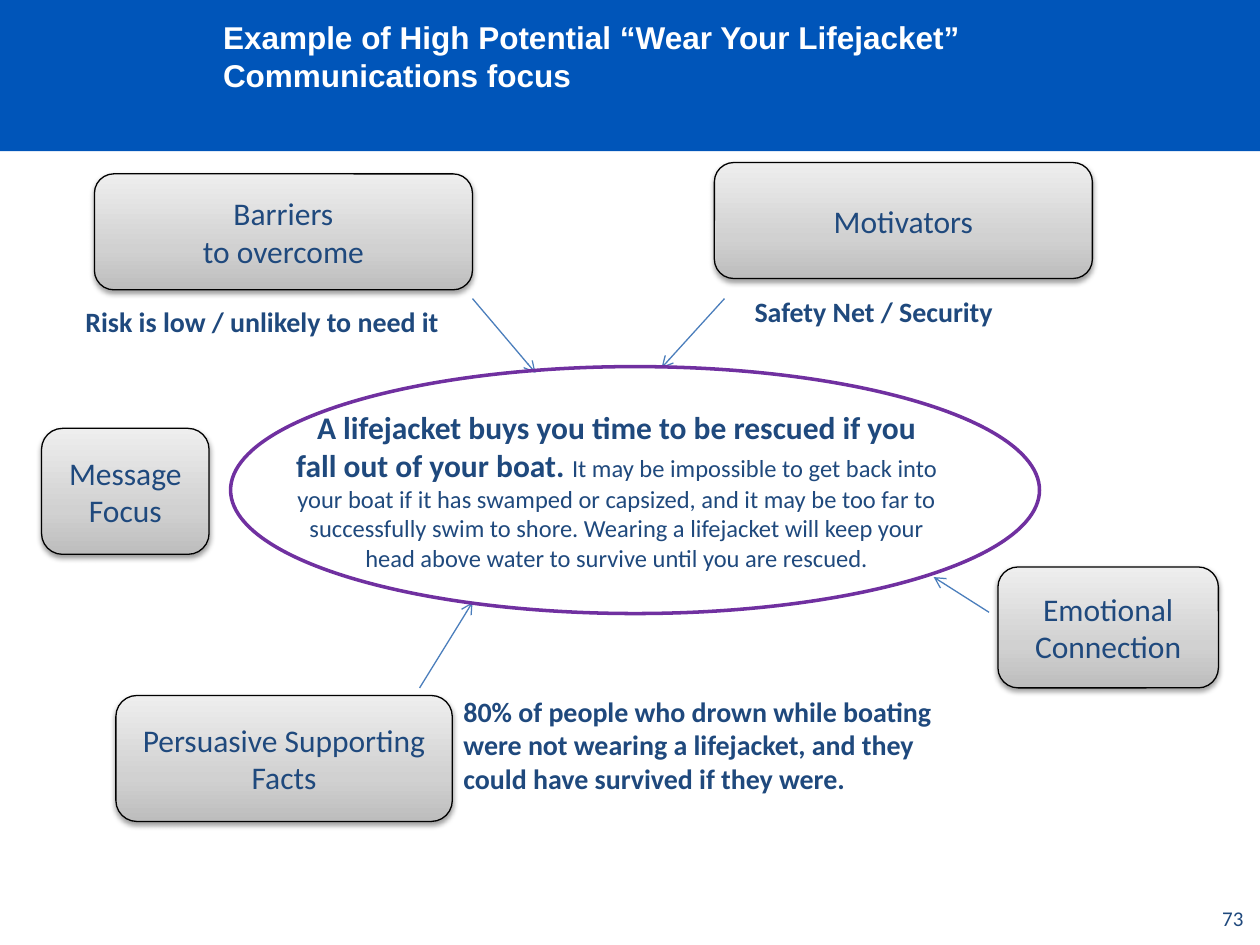
from dataclasses import dataclass

import lxml.etree
import pptx
import pptx.dml.color
import pptx.enum.shapes
import pptx.enum.text
import pptx.oxml.ns
import pptx.util

Inches = pptx.util.Inches
Pt = pptx.util.Pt
qn = pptx.oxml.ns.qn
SHAPE = pptx.enum.shapes.MSO_SHAPE
ALIGN = pptx.enum.text.PP_ALIGN
ANCHOR = pptx.enum.text.MSO_ANCHOR

NAVY = "1F497D"
BLUE = "0055B9"
WHITE = "FFFFFF"
GRAYS = ((0, "BDBDBD"), (35, "D1D1D1"), (100, "EEEEEE"))


@dataclass
class Topic:
    text: str
    box: tuple


@dataclass
class Note:
    text: str
    box: tuple


@dataclass
class Arrow:
    start: tuple
    end: tuple


TOPICS = [
    Topic("Persuasive Supporting Facts", (0.92, 5.52, 2.67, 1)),
    Topic("Emotional Connection", (7.92, 4.5, 1.75, 0.96)),
    Topic("Message Focus", (0.33, 3.4, 1.33, 1)),
    Topic("Barriers\nto overcome", (0.75, 1.38, 3, 0.92)),
    Topic("Motivators", (5.67, 1.29, 3, 0.92)),
]
NOTES = [
    Note("Safety Net / Security", (5.89, 2.29, 2.36, 0.37)),
    Note("Risk is low / unlikely to need it", (0.58, 2.37, 3.17, 0.37)),
    Note("80% of people who drown while boating were not wearing a lifejacket, "
         "and they could have survived if they were.", (3.58, 5.46, 3.95, 0.91)),
]
ARROWS = [
    Arrow((3.33, 5.46), (3.75, 4.78)),
    Arrow((3.75, 2.37), (4.25, 2.96)),
    Arrow((5.75, 2.37), (5.25, 2.92)),
    Arrow((7.85, 4.86), (7.41, 4.58)),
]
KEY_MESSAGE = "A lifejacket buys you time to be rescued if you fall out of your boat. "
KEY_DETAIL = (
    "It may be impossible to get back into your boat if it has swamped or capsized, "
    "and it may be too far to successfully swim to shore. Wearing a lifejacket will "
    "keep your head above water to survive until you are rescued."
)


def rgb(color: str):
    return pptx.dml.color.RGBColor.from_string(color)


def lengths(values: tuple) -> list:
    return [Inches(v) for v in values]


def style(font, size=18, name="Calibri", color=NAVY, bold=False) -> None:
    font.size = Pt(size)
    font.name = name
    font.bold = bold
    font.color.rgb = rgb(color)


def write(tf, text: str, align=ALIGN.LEFT, anchor=ANCHOR.TOP, **fmt) -> None:
    tf.word_wrap = True
    tf.auto_size = pptx.enum.text.MSO_AUTO_SIZE.NONE
    tf.vertical_anchor = anchor
    tf.text = text
    for p in tf.paragraphs:
        p.alignment = align
        for r in p.runs:
            style(r.font, **fmt)


def add_text(s, box: tuple, text: str, **fmt):
    sp = s.shapes.add_textbox(*lengths(box))
    write(sp.text_frame, text, **fmt)
    return sp


def add_topic(s, topic: Topic) -> None:
    sp = s.shapes.add_shape(SHAPE.ROUNDED_RECTANGLE, *lengths(topic.box))
    sp.fill.gradient()
    sp.fill.gradient_angle = 90
    sp.line.color.rgb = rgb("000000")
    sp.line.width = Pt(0.75)
    sp.shadow.inherit = False
    spPr = sp._element.spPr
    stops = spPr.find(".//" + qn("a:gsLst"))
    for old in list(stops):
        stops.remove(old)
    for pos, color in GRAYS:
        gs = lxml.etree.SubElement(stops, qn("a:gs"), pos=str(pos * 1000))
        lxml.etree.SubElement(gs, qn("a:srgbClr"), val=color)
    shadow = lxml.etree.SubElement(
        spPr.find(qn("a:effectLst")), qn("a:outerShdw"), blurRad=str(Pt(3.1)),
        dist=str(Pt(1.6)), dir="5400000", rotWithShape="0")
    black = lxml.etree.SubElement(shadow, qn("a:srgbClr"), val="000000")
    lxml.etree.SubElement(black, qn("a:alpha"), val="38000")
    write(sp.text_frame, topic.text, align=ALIGN.CENTER, anchor=ANCHOR.MIDDLE)


def add_arrow(s, arrow: Arrow) -> None:
    sp = s.shapes.add_connector(pptx.enum.shapes.MSO_CONNECTOR.STRAIGHT,
                                *lengths(arrow.start + arrow.end))
    sp.line.color.rgb = rgb("4B7EBC")
    sp.line.width = Pt(0.75)
    lxml.etree.SubElement(sp.line._get_or_add_ln(), qn("a:tailEnd"), type="arrow")
    lxml.etree.SubElement(sp._element.spPr, qn("a:effectLst"))


def add_header(s) -> None:
    band = s.shapes.add_shape(SHAPE.RECTANGLE, *lengths((0, -0.03, 10, 1.23)))
    band.fill.solid()
    band.fill.fore_color.rgb = rgb(BLUE)
    band.line.fill.background()
    band.shadow.inherit = False
    title = s.shapes.title
    title._element.addprevious(band._element)
    title.left, title.top, title.width, title.height = lengths((1.67, 0.11, 8.17, 0.67))
    write(title.text_frame,
          "Example of High Potential “Wear Your Lifejacket”\vCommunications focus",
          anchor=ANCHOR.MIDDLE, name="Arial", color=WHITE, bold=True)


def add_focus(s) -> None:
    sp = add_text(s, (2.25, 3.19, 5.29, 1.41), KEY_MESSAGE, align=ALIGN.CENTER, bold=True)
    r = sp.text_frame.paragraphs[0].add_run()
    r.text = KEY_DETAIL
    style(r.font, size=14)


def add_ring(s) -> None:
    sp = s.shapes.add_shape(SHAPE.OVAL, *lengths((1.83, 2.91, 6.42, 1.96)))
    sp.fill.background()
    sp.line.color.rgb = rgb("7030A0")
    sp.line.width = Pt(2)
    sp.shadow.inherit = False


def add_page_number(s) -> None:
    sp = add_text(s, (9.36, 7.09, 0.63, 0.4), "73", align=ALIGN.RIGHT,
                  anchor=ANCHOR.MIDDLE, size=12)
    tf = sp.text_frame
    tf.margin_left = tf.margin_top = tf.margin_bottom = Inches(0.04)
    tf.margin_right = Inches(0.12)


def main() -> None:
    prs = pptx.Presentation()
    prs.slide_width, prs.slide_height = Inches(10), Inches(7.5)
    s = prs.slides.add_slide(prs.slide_layouts[5])
    add_header(s)
    add_focus(s)
    for topic in TOPICS:
        add_topic(s, topic)
    for arrow in ARROWS:
        add_arrow(s, arrow)
    for note in NOTES:
        add_text(s, note.box, note.text, size=16, bold=True)
    add_ring(s)
    add_page_number(s)
    prs.save("out.pptx")


if __name__ == "__main__":
    main()
